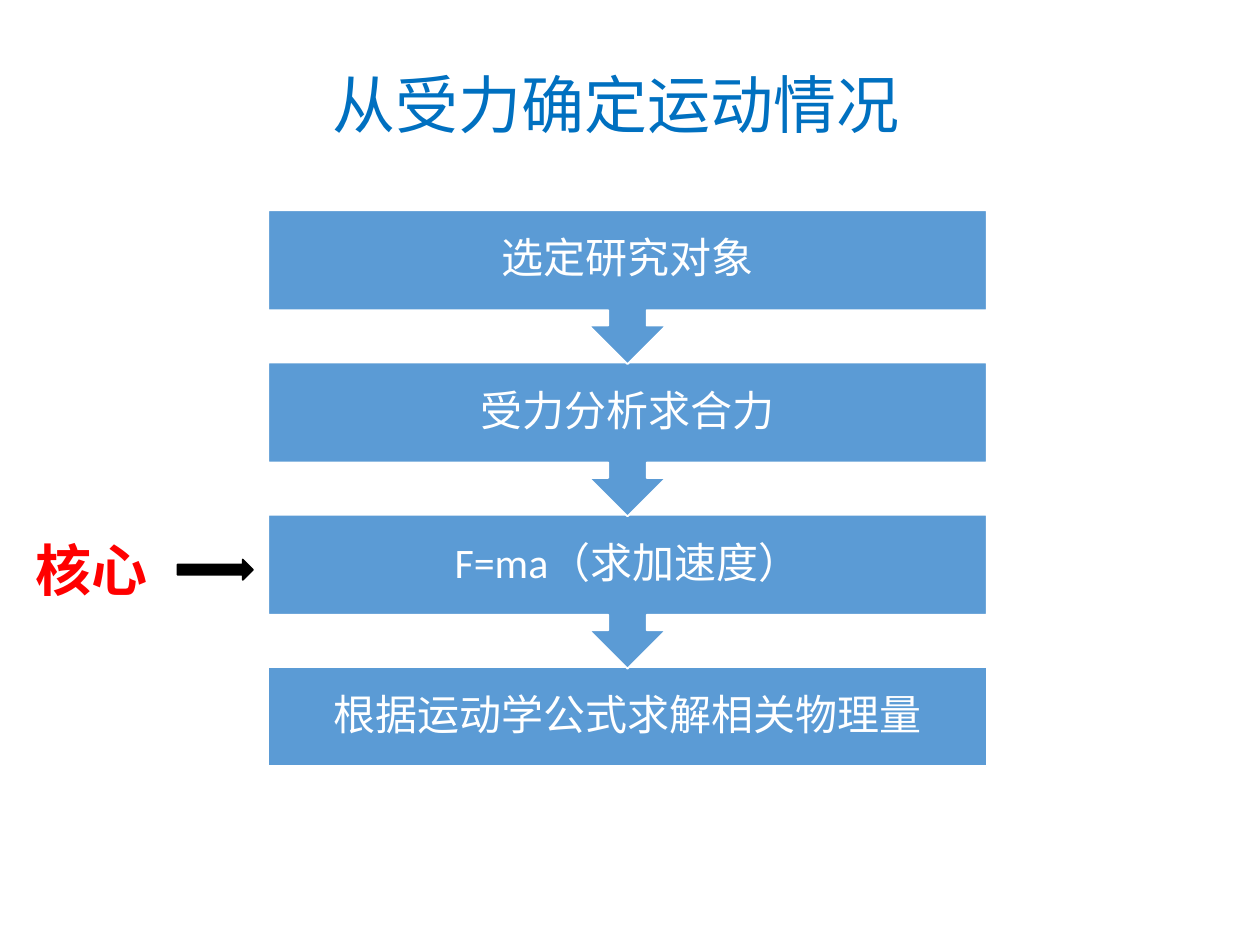
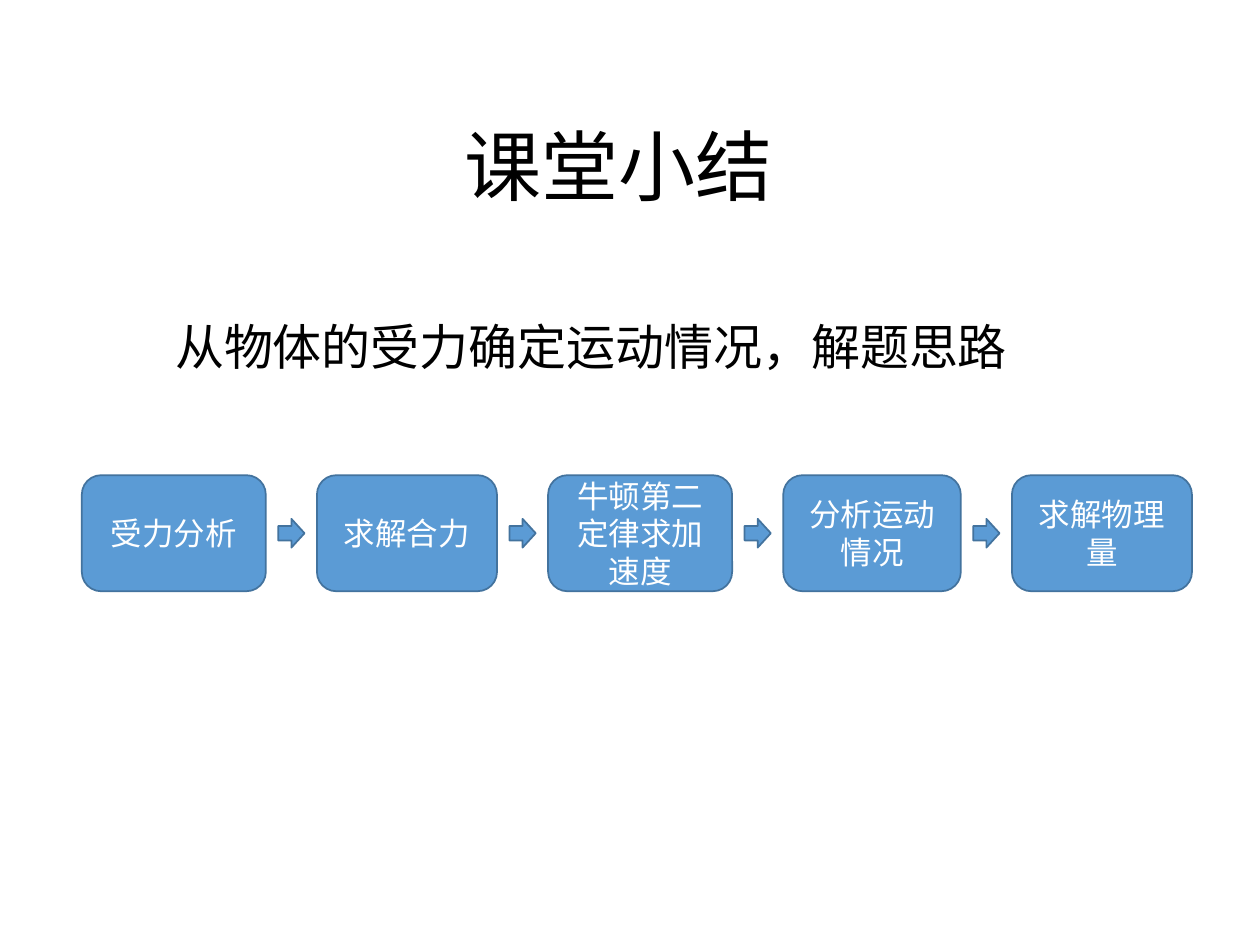
import lxml.etree
import pptx
import pptx.dml.color
import pptx.enum.shapes
import pptx.enum.text
import pptx.oxml.ns
import pptx.util

Cm = pptx.util.Cm
RGBColor = pptx.dml.color.RGBColor
SHAPE = pptx.enum.shapes.MSO_SHAPE
ANCHOR = pptx.enum.text.MSO_ANCHOR
qn = pptx.oxml.ns.qn

BLUE = RGBColor(0x5B, 0x9B, 0xD5)
DARK_BLUE = RGBColor(0x43, 0x73, 0x9E)
TITLE_BLUE = RGBColor(0x00, 0x70, 0xC0)
RED = RGBColor(0xFF, 0x00, 0x00)
BLACK = RGBColor(0x00, 0x00, 0x00)
WHITE = RGBColor(0xFF, 0xFF, 0xFF)
LATIN = "Calibri"
CHINESE = "Noto Sans CJK SC"

METHOD_TITLE = "从受力确定运动情况"
METHOD_STEPS = ["选定研究对象", "受力分析求合力", "F=ma（求加速度）", "根据运动学公式求解相关物理量"]
CORE_LABEL = "核心"
SUMMARY_TITLE = "课堂小结"
SUMMARY_LEAD = "从物体的受力确定运动情况，解题思路"
SUMMARY_STEPS = [
    ("受力分析", 3.71),
    ("求解合力", 3.63),
    ("牛顿第二定律求加速度", 3.71),
    ("分析运动情况", 3.58),
    ("求解物理量", 3.63),
]

STEP_LEFT, STEP_TOP, STEP_WIDTH = 5.41, 4.24, 14.48
STEP_HEIGHT, CALLOUT_HEIGHT, STEP_PITCH = 2.0, 3.1, 3.07
CHAIN_LEFT, CHAIN_TOP, CHAIN_HEIGHT, CHAIN_GAP = 1.65, 9.58, 2.34, 1.03
ARROW_WIDTH, ARROW_HEIGHT = 0.53, 0.58


def write(holder, text, size, color, font=LATIN, anchor=ANCHOR.TOP, wrap=True, bold=False):
    """Put one centred paragraph into a shape and return it."""
    frame = holder.text_frame
    frame.text = text
    frame.word_wrap = wrap
    frame.auto_size = pptx.enum.text.MSO_AUTO_SIZE.NONE
    frame.vertical_anchor = anchor
    paragraph = frame.paragraphs[0]
    paragraph.alignment = pptx.enum.text.PP_ALIGN.CENTER
    paragraph.font.size = pptx.util.Pt(size)
    paragraph.font.bold = bold
    paragraph.font.color.rgb = color
    paragraph.font.name = font
    defaults = paragraph._p.pPr.find(qn("a:defRPr"))
    lxml.etree.SubElement(defaults, qn("a:ea"), typeface=CHINESE)
    return paragraph


def add_titled_slide(deck, text, box, size, color, font=LATIN, wrap=True):
    """Add a title-only slide with its title placed and styled."""
    slide = deck.slides.add_slide(deck.slide_layouts[5])
    title = slide.shapes.title
    title.left, title.top, title.width, title.height = map(Cm, box)
    write(title, text, size, color, font, wrap=wrap)
    return slide


def add_label(slide, text, box, size, color, **style):
    """Add a text box."""
    write(slide.shapes.add_textbox(*map(Cm, box)), text, size, color, **style)


def add_block(slide, kind, box, fill, line):
    """Add a filled preset shape with a thin outline."""
    block = slide.shapes.add_shape(kind, *map(Cm, box))
    block.shadow.inherit = False
    block.fill.solid()
    block.fill.fore_color.rgb = fill
    block.line.color.rgb = line
    block.line.width = pptx.util.Pt(1)
    return block


def build_method(deck):
    """Build the vertical flow of solution steps."""
    slide = add_titled_slide(deck, METHOD_TITLE, (6.38, 1.19, 12.07, 1.8), 36, TITLE_BLUE, wrap=False)
    last = len(METHOD_STEPS) - 1
    for index, step in reversed(list(enumerate(METHOD_STEPS))):
        kind, height = (
            (SHAPE.RECTANGLE, STEP_HEIGHT) if index == last else (SHAPE.DOWN_ARROW_CALLOUT, CALLOUT_HEIGHT)
        )
        box = (STEP_LEFT, STEP_TOP + index * STEP_PITCH, STEP_WIDTH, height)
        block = add_block(slide, kind, box, BLUE, WHITE)
        write(block, step, 24, WHITE, anchor=ANCHOR.MIDDLE).line_spacing = 0.9
    add_label(slide, CORE_LABEL, (0.46, 10.67, 2.79, 1.63), 32, RED, wrap=False, bold=True)
    add_block(slide, SHAPE.RIGHT_ARROW, (3.58, 11.28, 1.52, 0.41), BLACK, BLACK)


def build_summary(deck):
    """Build the lesson summary with its horizontal chain."""
    slide = add_titled_slide(deck, SUMMARY_TITLE, (7.82, 2.26, 9.32, 2.13), 44, BLACK, CHINESE)
    add_label(slide, SUMMARY_LEAD, (2.62, 6.25, 18.59, 1.45), 28, BLACK, font=CHINESE)
    arrow_top = CHAIN_TOP + (CHAIN_HEIGHT - ARROW_HEIGHT) / 2
    left = CHAIN_LEFT
    for index, (step, width) in enumerate(SUMMARY_STEPS):
        if index:
            arrow_left = left - (CHAIN_GAP + ARROW_WIDTH) / 2
            arrow_box = (arrow_left, arrow_top, ARROW_WIDTH, ARROW_HEIGHT)
            add_block(slide, SHAPE.RIGHT_ARROW, arrow_box, BLUE, DARK_BLUE)
        box = (left, CHAIN_TOP, width, CHAIN_HEIGHT)
        block = add_block(slide, SHAPE.ROUNDED_RECTANGLE, box, BLUE, DARK_BLUE)
        write(block, step, 18, WHITE, anchor=ANCHOR.MIDDLE)
        left += width + CHAIN_GAP


def main():
    """Build both slides and save the deck."""
    deck = pptx.Presentation()
    deck.slide_width, deck.slide_height = Cm(25.4), Cm(19.05)
    build_method(deck)
    build_summary(deck)
    deck.save("out.pptx")


if __name__ == "__main__":
    main()
